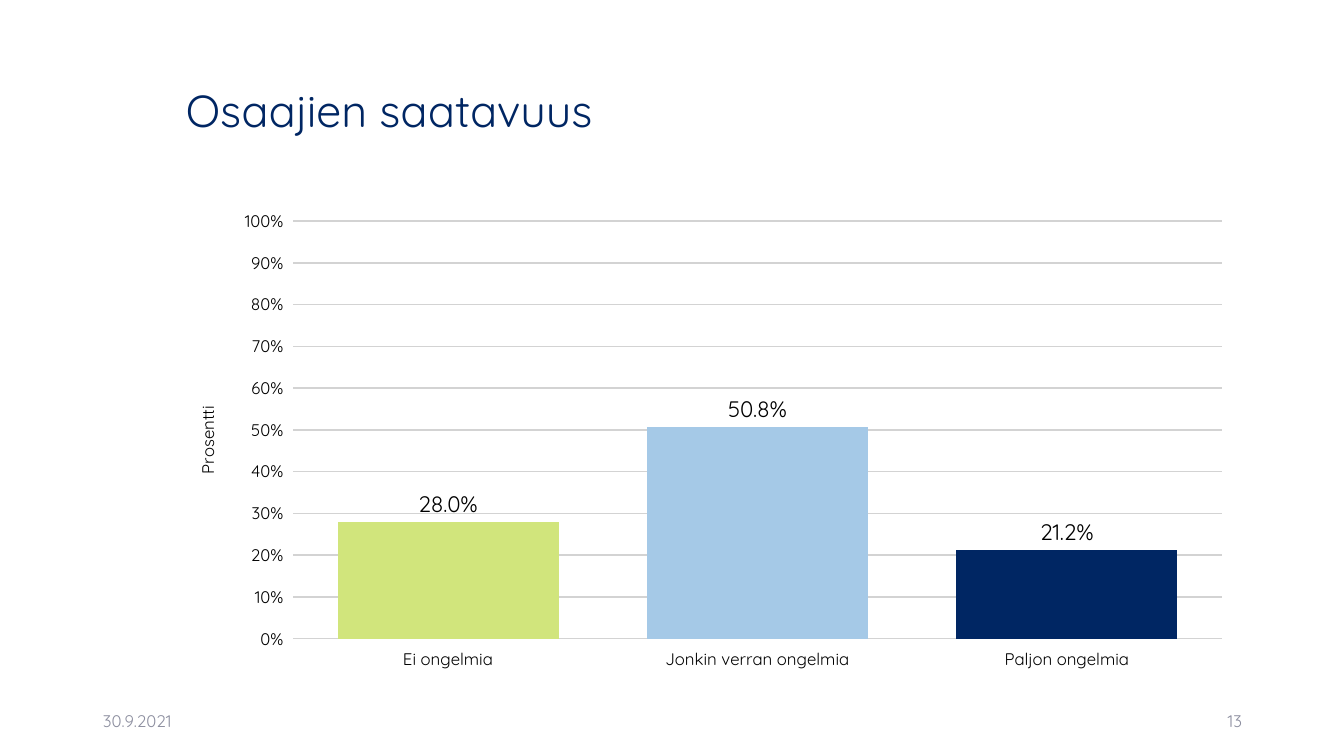
from lxml.etree import SubElement
from pptx import Presentation
from pptx.chart.data import CategoryChartData
from pptx.dml.color import RGBColor
from pptx.enum.chart import XL_CHART_TYPE, XL_LABEL_POSITION, XL_TICK_MARK
from pptx.enum.text import MSO_ANCHOR, PP_ALIGN
from pptx.oxml import parse_xml
from pptx.oxml.ns import nsdecls, qn
from pptx.util import Pt

EMU_PER_PX = 914400 / 100.8
FONT = "Quicksand"
NAVY = RGBColor(0x00, 0x26, 0x63)
LIGHT_BLUE = RGBColor(0xA5, 0xC9, 0xE7)
LIME = RGBColor(0xD1, 0xE5, 0x7C)
GREY = RGBColor(0x8C, 0x8E, 0x9F)
GRID_GREY = RGBColor(0xD3, 0xD3, 0xD3)
BLACK = RGBColor(0x00, 0x00, 0x00)

# Category, share of answers, bar colour
ANSWERS = [
    ("Ei ongelmia", 0.28, LIME),
    ("Jonkin verran ongelmia", 0.508, LIGHT_BLUE),
    ("Paljon ongelmia", 0.212, NAVY),
]


def px(length):
    return round(length * EMU_PER_PX)


def set_font(font, size, color):
    font.name = FONT
    font.size = Pt(size)
    font.bold = False
    font.color.rgb = color


def add_text(slide, text, left, top, width, height, *, size=12, color=GREY,
             align=PP_ALIGN.LEFT, line_spacing=1.0):
    shape = slide.shapes.add_textbox(px(left), px(top), px(width), px(height))
    frame = shape.text_frame
    frame.word_wrap = True
    frame.vertical_anchor = MSO_ANCHOR.MIDDLE
    paragraph = frame.paragraphs[0]
    paragraph.alignment = align
    paragraph.line_spacing = line_spacing
    run = paragraph.add_run()
    run.text = text
    set_font(run.font, size, color)


def place_plot(chart, **fractions):
    """Fix the inner plot area as fractions of the chart frame."""
    plot_area = chart._chartSpace.chart.plotArea
    for layout in plot_area.findall(qn("c:layout")):
        plot_area.remove(layout)
    layout = parse_xml(f"<c:layout {nsdecls('c')}><c:manualLayout/></c:layout>")
    settings = {"layoutTarget": "inner", "xMode": "edge", "yMode": "edge", **fractions}
    for name, value in settings.items():
        SubElement(layout[0], qn(f"c:{name}")).set("val", str(value))
    plot_area.insert(0, layout)


def format_axes(chart):
    category_axis, value_axis = chart.category_axis, chart.value_axis
    for axis in (category_axis, value_axis):
        axis.format.line.fill.background()
        axis.major_tick_mark = XL_TICK_MARK.OUTSIDE
        set_font(axis.tick_labels.font, 12, BLACK)

    value_axis.minimum_scale = 0
    value_axis.maximum_scale = 1
    value_axis.major_unit = 0.1
    value_axis.tick_labels.number_format = "0%"
    value_axis.tick_labels.number_format_is_linked = False
    grid_line = value_axis.major_gridlines.format.line
    grid_line.color.rgb = GRID_GREY
    grid_line.width = Pt(1)

    title_frame = value_axis.axis_title.text_frame
    title_frame.text = "Prosentti"
    set_font(title_frame.paragraphs[0].runs[0].font, 12, BLACK)
    title_frame._txBody.bodyPr.set("rot", "-5400000")
    title_frame._txBody.bodyPr.set("vert", "horz")


def add_column_chart(slide, answers, left, top, width, height):
    data = CategoryChartData(number_format="0.0%")
    data.categories = [category for category, _, _ in answers]
    data.add_series("Series 1", [share for _, share, _ in answers])
    chart = slide.shapes.add_chart(XL_CHART_TYPE.COLUMN_CLUSTERED, px(left), px(top),
                                   px(width), px(height), data).chart
    chart.has_legend = False
    chart.has_title = False
    set_font(chart.font, 12, BLACK)
    format_axes(chart)
    place_plot(chart, x=0.11, y=0.04, w=0.87, h=0.87)

    # Bars
    plot = chart.plots[0]
    plot.gap_width = 40
    plot.vary_by_categories = False
    series = plot.series[0]
    series.format.fill.solid()
    series.format.fill.fore_color.rgb = LIME
    for index, (_, _, color) in enumerate(answers):
        fill = series.points[index].format.fill
        fill.solid()
        fill.fore_color.rgb = color

    # Value labels
    labels = series.data_labels
    labels.show_value = True
    labels.position = XL_LABEL_POSITION.OUTSIDE_END
    labels.number_format = "0.0%"
    labels.number_format_is_linked = False
    set_font(labels.font, 16, BLACK)


def main():
    presentation = Presentation()
    presentation.slide_width = px(1344)
    presentation.slide_height = px(756)
    slide = presentation.slides.add_slide(presentation.slide_layouts[6])

    # Title
    add_text(slide, "Osaajien saatavuus", 176, 40, 1067, 146,
             size=32, color=NAVY, line_spacing=0.9)

    # Chart
    add_column_chart(slide, ANSWERS, 176, 202, 1067, 480)

    # Footer
    add_text(slide, "30.9.2021", 93, 701, 302, 40)
    add_text(slide, "13", 950, 701, 302, 40, align=PP_ALIGN.RIGHT)

    presentation.save("out.pptx")


if __name__ == "__main__":
    main()
